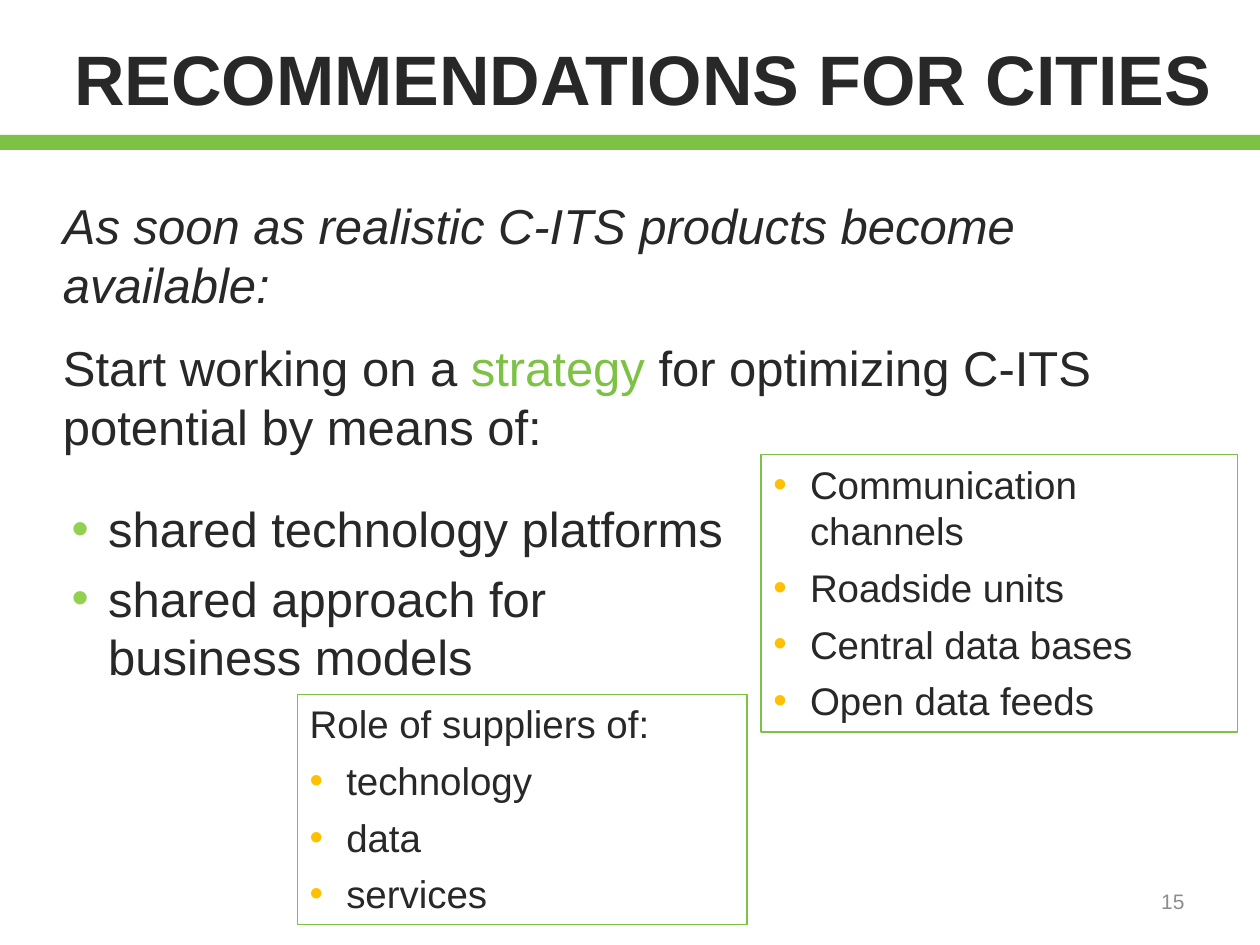
import pptx
import pptx.dml.color
import pptx.enum.shapes
import pptx.enum.text
import pptx.util
from lxml import etree
from pptx.util import Inches

THEME = {
    "font": "Arial",
    "text": "282828", "green": "7DC145", "muted": "8D8D8D",
    "bullet_green": "92D050", "bullet_amber": "FFC000",
    "title": 40, "body": 28, "detail": 22, "number": 12,
}


def color(name):
    return pptx.dml.color.RGBColor.from_string(THEME[name])


def add_text(place, paragraphs, size, ink="text", after=6, margins=True, outline=False):
    """Each paragraph is (list of texts, bullet colour name or None)."""
    box = page.shapes.add_textbox(*[Inches(length) for length in place])
    frame = box.text_frame
    frame.word_wrap = True
    if not margins:
        frame.margin_left = frame.margin_right = 0
        frame.margin_top = frame.margin_bottom = 0
    if outline:
        frame.auto_size = pptx.enum.text.MSO_AUTO_SIZE.SHAPE_TO_FIT_TEXT
        box.line.color.rgb = color("green")
        box.line.width = pptx.util.Pt(0.75)
    for index, (texts, bullet) in enumerate(paragraphs):
        para = frame.paragraphs[0] if index == 0 else frame.add_paragraph()
        if bullet:
            properties = para._p.get_or_add_pPr()
            properties.set("marL", str(Inches(0.29)))
            properties.set("indent", str(Inches(-0.29)))
            namespace = "{http://schemas.openxmlformats.org/drawingml/2006/main}"
            tint = etree.SubElement(properties, namespace + "buClr")
            etree.SubElement(tint, namespace + "srgbClr", val=THEME[bullet])
            etree.SubElement(properties, namespace + "buFont", typeface=THEME["font"])
            etree.SubElement(properties, namespace + "buChar", char="•")
        para.space_after = pptx.util.Pt(after)
        for text in texts:
            span = para.add_run()
            span.text = text
            span.font.name = THEME["font"]
            span.font.size = pptx.util.Pt(THEME[size])
            span.font.color.rgb = color(ink)
    return frame


deck = pptx.Presentation()
deck.slide_width, deck.slide_height = Inches(10), Inches(7.5)
page = deck.slides.add_slide(deck.slide_layouts[6])

# Green band under the title
band = page.shapes.add_shape(pptx.enum.shapes.MSO_SHAPE.RECTANGLE,
                             Inches(0), Inches(1.07), Inches(10), Inches(0.12))
band.shadow.inherit = False
band.fill.solid()
band.fill.fore_color.rgb = color("green")
band.line.fill.background()

# Title
title = add_text((0.59, 0.28, 9.13, 0.52), [(["RECOMMENDATIONS FOR CITIES"], None)],
                 "title", after=0, margins=False)
title.paragraphs[0].runs[0].font.bold = True

# Introduction
intro = add_text((0.5, 1.55, 9, 2.2), [
    (["As soon as realistic C-ITS products become available:"], None),
    (["Start working on a ", "strategy", " for optimizing C-ITS potential by means of:"], None),
], "body", margins=False)
condition, advice = intro.paragraphs
condition.runs[0].font.italic = True
condition.space_after = pptx.util.Pt(8)
advice.space_before = pptx.util.Pt(6)
advice.runs[1].font.color.rgb = color("green")

# Platform details
add_text((6.04, 3.61, 3.78, 2.2), [
    ([item], "bullet_amber")
    for item in ("Communication channels", "Roadside units", "Central data bases", "Open data feeds")
], "detail", outline=True)

# Shared means
add_text((0.47, 3.91, 5.56, 1.6), [
    ([item], "bullet_green")
    for item in ("shared technology platforms", "shared approach for business models")
], "body")

# Supplier roles
add_text((2.36, 5.51, 3.57, 1.83), [(["Role of suppliers of:"], None)] + [
    ([item], "bullet_amber") for item in ("technology", "data", "services")
], "detail", outline=True)

# Page number
number = add_text((7.17, 6.95, 2.33, 0.4), [(["15"], None)], "number", ink="muted", after=0)
number.vertical_anchor = pptx.enum.text.MSO_ANCHOR.MIDDLE
number.paragraphs[0].alignment = pptx.enum.text.PP_ALIGN.RIGHT

deck.save("out.pptx")
